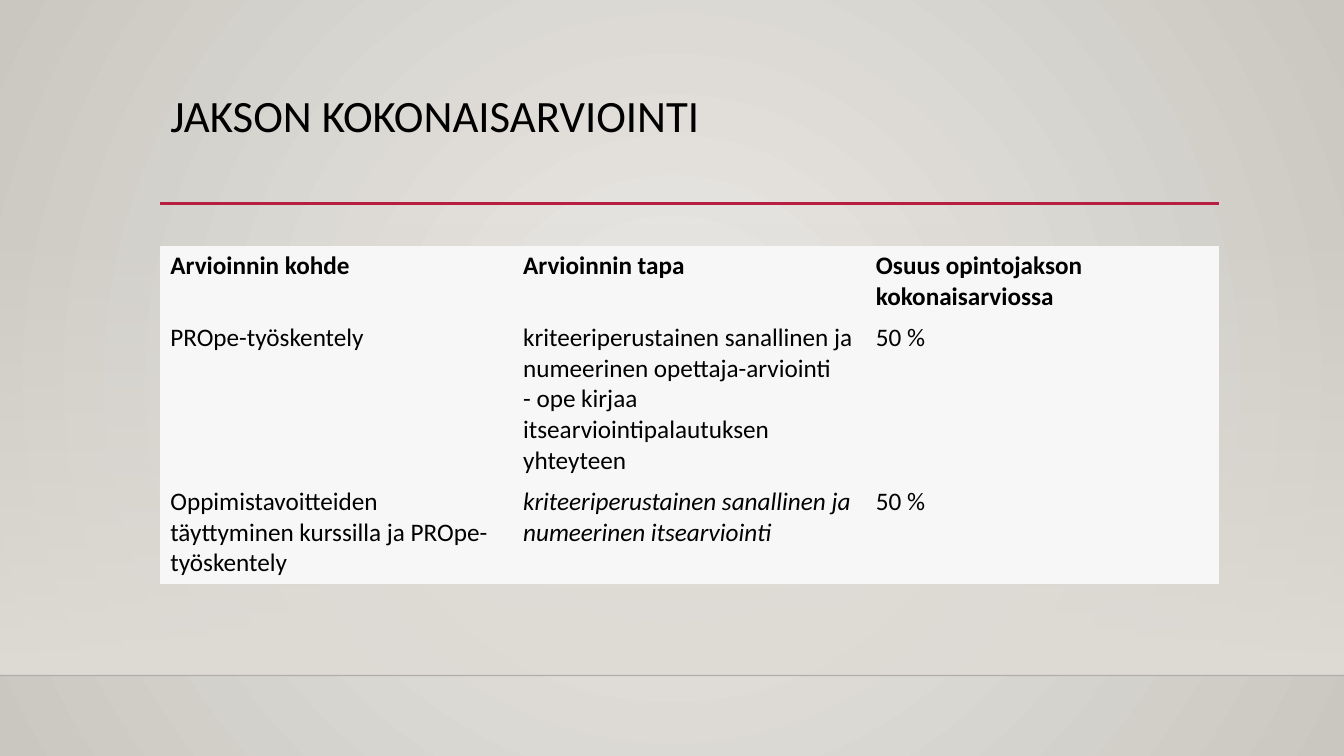
from lxml import etree
from pptx import Presentation
from pptx.dml.color import RGBColor
from pptx.enum import shapes, text
from pptx.oxml import parse_xml
from pptx.oxml.ns import nsdecls, qn
from pptx.util import Pt

BLACK = RGBColor(0x00, 0x00, 0x00)
LIGHT = RGBColor(0xEC, 0xEA, 0xE7)
DARK = RGBColor(0xCA, 0xC7, 0xC1)
BAND = RGBColor(0xDF, 0xDB, 0xD5)
RED = RGBColor(0xB7, 0x1E, 0x42)
CELL = RGBColor(0xF7, 0xF7, 0xF7)
FONT = "Calibri"
NO_STYLE = "{2D5ABB26-0587-4C30-8999-92F81FD0307C}"
WIDTH, HEIGHT = 960, 540
LEFT, CONTENT_WIDTH = 114.5, 756

ROWS = [
    ("Arvioinnin kohde", "Arvioinnin tapa", "Osuus opintojakson kokonaisarviossa"),
    ("PROpe-työskentely",
     "kriteeriperustainen sanallinen ja numeerinen opettaja-arviointi\v"
     "- ope kirjaa itsearviointipalautuksen yhteyteen",
     "50 %"),
    ("Oppimistavoitteiden täyttyminen kurssilla ja PROpe-työskentely",
     "kriteeriperustainen sanallinen ja numeerinen itsearviointi",
     "50 %"),
]
ROW_HEIGHTS = (50, 116, 72)


def set_alpha(color_element, percent):
    etree.SubElement(color_element, qn("a:alpha")).set("val", str(percent * 1000))


def set_gradient(fill, first, last):
    fill.gradient()
    for stop, color, position in zip(fill.gradient_stops, (first, last), (0, 1)):
        stop.color.rgb = color
        stop.position = position


def add_line(s, x, y, w, color, weight):
    line = s.shapes.add_connector(
        shapes.MSO_CONNECTOR.STRAIGHT, Pt(x), Pt(y), Pt(x + w), Pt(y))
    line.line.color.rgb = color
    line.line.width = Pt(weight)
    etree.SubElement(line._element.spPr, qn("a:effectLst"))
    return line


def add_backdrop(s, x, y, w, h):
    # Radial background
    fill = s.background.fill
    set_gradient(fill, LIGHT, DARK)
    lin = s._element.find(".//" + qn("a:lin"))
    lin.getparent().replace(lin, parse_xml(
        f'<a:path {nsdecls("a")} path="circle">'
        '<a:fillToRect l="50000" t="50000" r="50000" b="50000"/></a:path>'))

    # Band fading in towards the floor line
    sp = s.shapes.add_shape(shapes.MSO_SHAPE.RECTANGLE, Pt(x), Pt(y), Pt(w), Pt(h))
    sp.shadow.inherit = False
    sp.line.fill.background()
    set_gradient(sp.fill, BAND, BAND)
    sp.fill.gradient_angle = 270
    set_alpha(sp._element.spPr.find(".//" + qn("a:srgbClr")), 0)

    # Floor line
    floor = add_line(s, x, y + h, w, BLACK, 1)
    set_alpha(floor._element.spPr.find(".//" + qn("a:srgbClr")), 20)


def add_title(s, x, y, w, h):
    title = s.shapes.title
    title.left, title.top, title.width, title.height = Pt(x), Pt(y), Pt(w), Pt(h)
    tf = title.text_frame
    tf.text = "JAKSON KOKONAISARVIOINTI"
    tf.word_wrap = True
    tf.auto_size = text.MSO_AUTO_SIZE.NONE
    tf.vertical_anchor = text.MSO_ANCHOR.TOP
    p = tf.paragraphs[0]
    p.alignment = text.PP_ALIGN.LEFT
    p.line_spacing = 0.9
    font = p.runs[0].font
    font.name, font.size, font.color.rgb = FONT, Pt(32), BLACK

    # Rule under the title
    add_line(s, x, y + h - 0.5, w, RED, 2.5)


def add_assessment_table(s, x, y, w):
    table = s.shapes.add_table(
        len(ROWS), len(ROWS[0]), Pt(x), Pt(y), Pt(w), Pt(sum(ROW_HEIGHTS))).table
    table.horz_banding = False
    table._tbl.tblPr.find(qn("a:tableStyleId")).text = NO_STYLE
    for i, (height, values) in enumerate(zip(ROW_HEIGHTS, ROWS)):
        table.rows[i].height = Pt(height)
        for j, value in enumerate(values):
            cell = table.cell(i, j)
            cell.fill.solid()
            cell.fill.fore_color.rgb = CELL
            cell.text_frame.text = value
            for r in cell.text_frame.paragraphs[0].runs:
                r.font.name, r.font.size, r.font.color.rgb = FONT, Pt(18), BLACK
                r.font.bold = i == 0
                r.font.italic = (i, j) == (2, 1)


def main():
    prs = Presentation()
    prs.slide_width, prs.slide_height = Pt(WIDTH), Pt(HEIGHT)
    s = prs.slides.add_slide(prs.slide_layouts[5])
    add_backdrop(s, 0, 159, WIDTH, 323.5)
    add_title(s, LEFT, 63.5, CONTENT_WIDTH, 82.5)
    add_assessment_table(s, LEFT, 175.5, CONTENT_WIDTH)
    prs.save("out.pptx")


if __name__ == "__main__":
    main()
